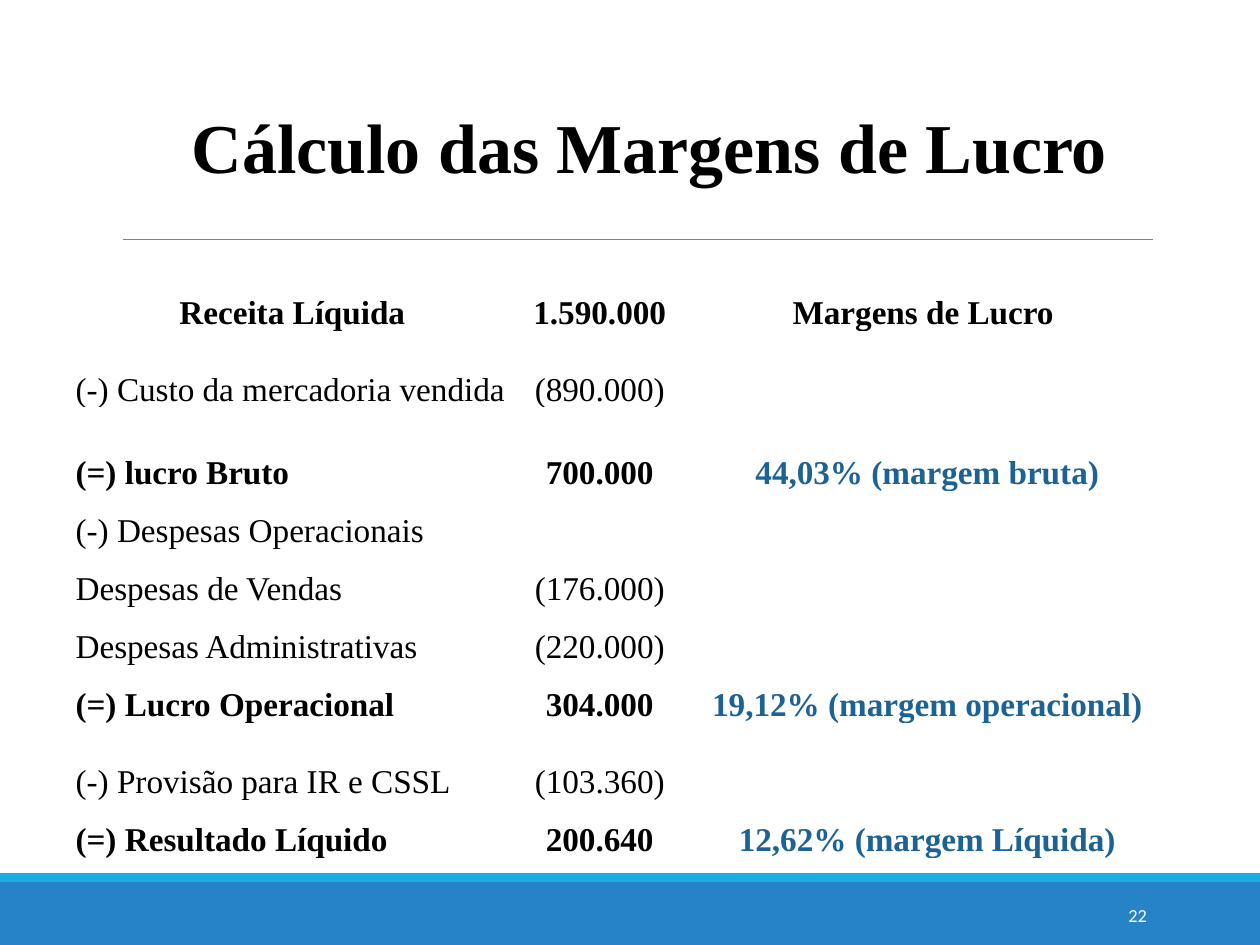
"""Build the profit margin slide with its table of results."""
import dataclasses

import lxml.etree
import pptx
import pptx.dml.color
import pptx.enum.shapes
import pptx.enum.text
import pptx.oxml.ns
import pptx.util

ALIGN = pptx.enum.text.PP_ALIGN
ANCHOR = pptx.enum.text.MSO_ANCHOR


@dataclasses.dataclass(frozen=True)
class Theme:
    serif: str = "Times New Roman"
    sans: str = "Calibri"
    ink: str = "000000"
    accent: str = "1D6294"
    footer: str = "2683C6"
    stripe: str = "1CADE4"
    rule: str = "808080"
    paper: str = "FFFFFF"
    title_size: float = 40
    table_size: float = 19
    number_size: float = 10.5


def color(code):
    return pptx.dml.color.RGBColor.from_string(code)


def write_text(frame, text, *, font, size, ink, bold=False,
               align=ALIGN.LEFT, spacing=1.0):
    para = frame.paragraphs[0]
    para.alignment = align
    para.line_spacing = spacing
    span = para.add_run()
    span.text = text
    span.font.name = font
    span.font.size = pptx.util.Pt(size)
    span.font.bold = bold
    span.font.color.rgb = color(ink)


class SlideBuilder:
    def __init__(self, deck, theme):
        self.theme = theme
        self.unit = deck.slide_width / 100
        self.page = deck.slides.add_slide(deck.slide_layouts[5])

    def grid(self, *counts):
        return [round(count * self.unit) for count in counts]

    def title(self, text, place):
        box = self.page.shapes.title
        box.left, box.top, box.width, box.height = self.grid(*place)
        frame = box.text_frame
        frame.word_wrap = True
        frame.auto_size = pptx.enum.text.MSO_AUTO_SIZE.SHAPE_TO_FIT_TEXT
        frame.vertical_anchor = ANCHOR.TOP
        write_text(frame, text, font=self.theme.serif, size=self.theme.title_size,
                   ink=self.theme.ink, bold=True, align=ALIGN.CENTER, spacing=1.5)

    def band(self, place, fill):
        shape = self.page.shapes.add_shape(
            pptx.enum.shapes.MSO_SHAPE.RECTANGLE, *self.grid(*place))
        shape.shadow.inherit = False
        shape.fill.solid()
        shape.fill.fore_color.rgb = color(fill)
        shape.line.fill.background()

    def rule(self, left, right, top):
        line = self.page.shapes.add_connector(
            pptx.enum.shapes.MSO_CONNECTOR.STRAIGHT, *self.grid(left, top, right, top))
        line.line.color.rgb = color(self.theme.rule)
        line.line.width = pptx.util.Pt(0.5)
        lxml.etree.SubElement(line._element.spPr, pptx.oxml.ns.qn("a:effectLst"))

    def page_number(self, text, place):
        box = self.page.shapes.add_textbox(*self.grid(*place))
        box.text_frame.word_wrap = True
        box.text_frame.vertical_anchor = ANCHOR.MIDDLE
        write_text(box.text_frame, text, font=self.theme.sans,
                   size=self.theme.number_size, ink=self.theme.paper, align=ALIGN.RIGHT)

    def table(self, rows, left, top, widths, heights):
        place = self.grid(left, top, sum(widths), sum(heights))
        table = self.page.shapes.add_table(len(rows), len(widths), *place).table
        table.first_row = table.horz_banding = False
        for column, width in zip(table.columns, self.grid(*widths)):
            column.width = width
        for row, height in zip(table.rows, self.grid(*heights)):
            row.height = height
        for row_index, texts in enumerate(rows):
            header = row_index == 0
            bold = header or texts[0].startswith("(=)")
            for column_index, text in enumerate(texts):
                cell = table.cell(row_index, column_index)
                cell.fill.background()
                if not text:
                    continue
                cell.vertical_anchor = ANCHOR.BOTTOM
                cell.margin_left = cell.margin_right = cell.margin_top = pptx.util.Inches(0.01)
                cell.margin_bottom = 0
                label = column_index == 0 and not header
                margin = column_index == 2 and not header
                write_text(cell.text_frame, text, font=self.theme.serif,
                           size=self.theme.table_size, bold=bold,
                           ink=self.theme.accent if margin else self.theme.ink,
                           align=ALIGN.LEFT if label else ALIGN.CENTER)


RESULTS = [
    ("Receita Líquida", "1.590.000", "Margens de Lucro "),
    ("(-) Custo da mercadoria vendida", "(890.000)", ""),
    ("(=) lucro Bruto", "700.000", "44,03% (margem bruta)"),
    ("(-) Despesas Operacionais", "", ""),
    ("Despesas de Vendas", "(176.000)", ""),
    ("Despesas Administrativas", "(220.000)", ""),
    ("(=) Lucro Operacional", "304.000", "19,12% (margem operacional)"),
    ("(-) Provisão para IR e CSSL", "(103.360)", ""),
    ("(=) Resultado Líquido", "200.640", "12,62% (margem Líquida)"),
]


def main():
    deck = pptx.Presentation()
    deck.slide_width = pptx.util.Inches(10)
    deck.slide_height = pptx.util.Inches(7.5)
    theme = Theme()
    builder = SlideBuilder(deck, theme)
    builder.band((0, 70, 100, 5), theme.footer)
    builder.band((0, 69.3, 100, 0.7), theme.stripe)
    builder.rule(9.8, 91.5, 19)
    builder.page_number("22", (81.2, 70.6, 10.8, 4))
    builder.title(" Cálculo das Margens de Lucro", (9.1, 4.4, 83.5, 9.9))
    tall, short = 6.1, 4.62
    builder.table(RESULTS, 5.9, 20.2, (34.6, 14.2, 37.8),
                  (tall, tall, 6.6, *[short] * 4, tall, short))
    deck.save("out.pptx")


if __name__ == "__main__":
    main()
